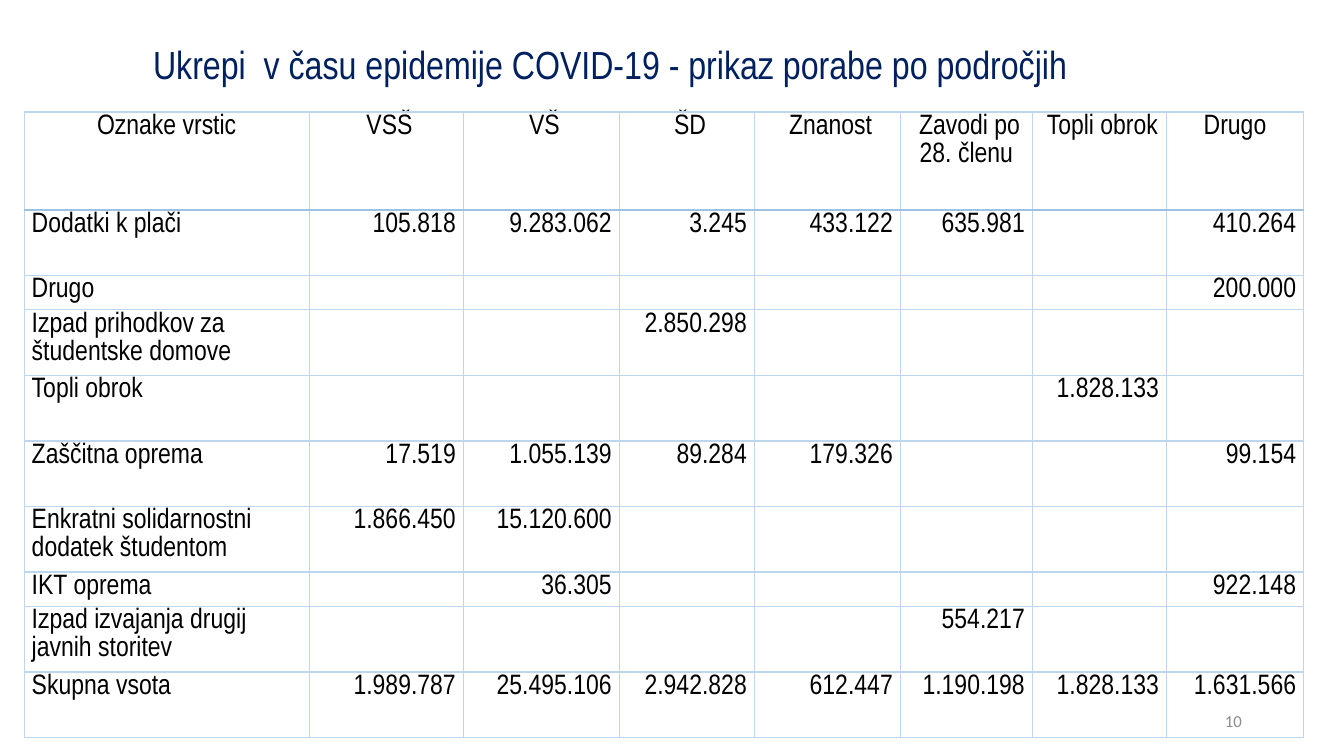
import pptx
import pptx.dml.color
import pptx.enum.text
import pptx.oxml
import pptx.oxml.ns
import pptx.util

Pt = pptx.util.Pt
ALIGN = pptx.enum.text.PP_ALIGN
ANCHOR = pptx.enum.text.MSO_ANCHOR

COLUMN_WIDTHS = [203.6, 110.1, 111.4, 96.5, 104.3, 94.3, 95.8, 98]
HEADER_HEIGHT, TALL_ROW, SHORT_ROW = 70, 46.8, 24.6
SHORT_LABELS = {"Drugo", "IKT oprema"}
GRID_LINE = ("BDD6EE", 1)
HEADER_LINE = ("9CC2E5", 1.5)

SPENDING = [
    ["Oznake vrstic", " VSŠ", " VŠ", " ŠD", " Znanost", " Zavodi po 28. členu", " Topli obrok", "Drugo"],
    ["Dodatki k plači", "105.818", "9.283.062", "3.245", "433.122", "635.981", "", "410.264"],
    ["Drugo", "", "", "", "", "", "", "200.000"],
    ["Izpad prihodkov za študentske domove", "", "", "2.850.298", "", "", "", ""],
    ["Topli obrok", "", "", "", "", "", "1.828.133", ""],
    ["Zaščitna oprema", "17.519", "1.055.139", "89.284", "179.326", "", "", "99.154"],
    ["Enkratni solidarnostni dodatek študentom", "1.866.450", "15.120.600", "", "", "", "", ""],
    ["IKT oprema", "", "36.305", "", "", "", "", "922.148"],
    ["Izpad izvajanja drugij javnih storitev", "", "", "", "", "554.217", "", ""],
    ["Skupna vsota", "1.989.787", "25.495.106", "2.942.828", "612.447", "1.190.198", "1.828.133", "1.631.566"],
]


def rgb(value):
    return pptx.dml.color.RGBColor.from_string(value)


def write_paragraph(paragraph, text, font_name, size, color, alignment, line_spacing):
    paragraph.text = text
    paragraph.alignment = alignment
    paragraph.line_spacing = line_spacing
    paragraph.font.name = font_name
    paragraph.font.size = Pt(size)
    paragraph.font.color.rgb = rgb(color)


def add_label(slide, box, text, font_name, size, color, alignment, line_spacing):
    frame = slide.shapes.add_textbox(*map(Pt, box)).text_frame
    frame.word_wrap = True
    frame.vertical_anchor = ANCHOR.MIDDLE
    write_paragraph(frame.paragraphs[0], text, font_name, size, color, alignment, line_spacing)


def add_borders(cell, top, bottom):
    properties = cell._tc.get_or_add_tcPr()
    sides = {"lnL": GRID_LINE, "lnR": GRID_LINE, "lnT": top, "lnB": bottom}
    for side, (color, width) in sides.items():
        properties.append(pptx.oxml.parse_xml(
            f'<a:{side} {pptx.oxml.ns.nsdecls("a")} w="{Pt(width)}">'
            f'<a:solidFill><a:srgbClr val="{color}"/></a:solidFill></a:{side}>'))


def row_height(row_index, label):
    if row_index == 0:
        return HEADER_HEIGHT
    return SHORT_ROW if label in SHORT_LABELS else TALL_ROW


def fill_cell(cell, text, row_index, column_index):
    cell.margin_left = cell.margin_right = Pt(5.4)
    cell.margin_top = cell.margin_bottom = 0
    if row_index == 0:
        alignment = ALIGN.CENTER
    else:
        alignment = ALIGN.RIGHT if column_index else ALIGN.LEFT
    write_paragraph(cell.text_frame.paragraphs[0], text, "Arial Narrow", 20, "000000", alignment, Pt(20))
    add_borders(
        cell,
        HEADER_LINE if row_index == 1 else GRID_LINE,
        HEADER_LINE if row_index == 0 else GRID_LINE)
    cell.fill.background()


def add_spending_table(slide, left, top):
    heights = [row_height(index, row[0]) for index, row in enumerate(SPENDING)]
    table = slide.shapes.add_table(
        len(SPENDING), len(COLUMN_WIDTHS), Pt(left), Pt(top),
        Pt(sum(COLUMN_WIDTHS)), Pt(sum(heights))).table
    table.first_row = False
    table.horz_banding = False
    for column, width in zip(table.columns, COLUMN_WIDTHS):
        column.width = Pt(width)
    for row_index, (row, height) in enumerate(zip(SPENDING, heights)):
        table.rows[row_index].height = Pt(height)
        for column_index, text in enumerate(row):
            fill_cell(table.cell(row_index, column_index), text, row_index, column_index)


def main():
    presentation = pptx.Presentation()
    presentation.slide_width, presentation.slide_height = Pt(960), Pt(540)
    slide = presentation.slides.add_slide(presentation.slide_layouts[6])
    add_label(slide, (102.24, 15.84, 702, 64.08),
              "Ukrepi  v času epidemije COVID-19 - prikaz porabe po področjih",
              "Arial Narrow", 28, "002060", ALIGN.LEFT, 0.9)
    add_spending_table(slide, 17.28, 80)
    add_label(slide, (678.24, 500.4, 216, 28.8), "10", "Calibri", 12, "8C8C8C", ALIGN.RIGHT, 1.0)
    presentation.save("out.pptx")


if __name__ == "__main__":
    main()
